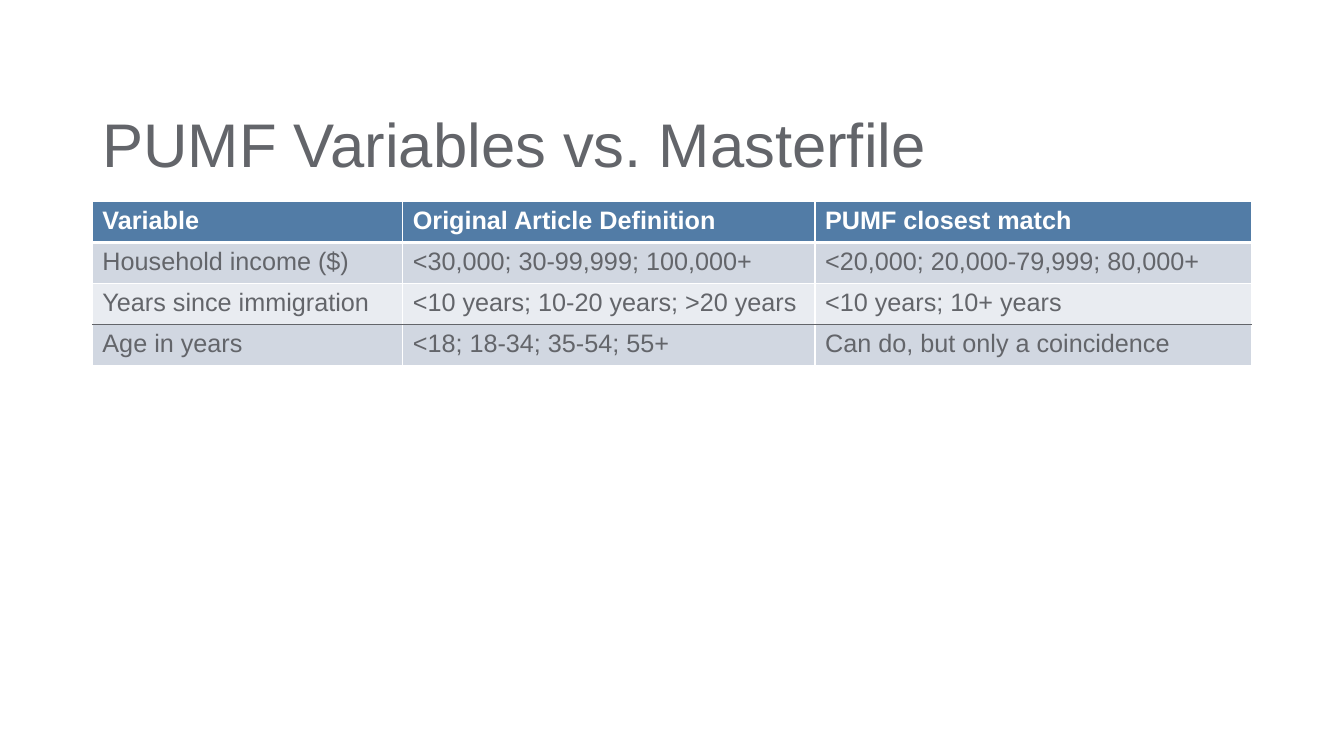
from lxml import etree
from pptx import Presentation
from pptx.dml.color import RGBColor
from pptx.enum.text import MSO_ANCHOR as Anchor, MSO_AUTO_SIZE as AutoSize, PP_ALIGN as Align
from pptx.oxml import parse_xml
from pptx.oxml.ns import nsdecls
from pptx.util import Pt

WHITE, GREY, BLUE = "FFFFFF", "63656A", "527CA6"
DARK_BAND, LIGHT_BAND = "D1D7E1", "E9ECF1"


def rgb(value):
    return RGBColor.from_string(value)


def write(frame, text, size=18, color=GREY, bold=False, spacing=1.0):
    paragraph = frame.paragraphs[0]
    paragraph.alignment = Align.LEFT
    paragraph.line_spacing = spacing
    run = paragraph.add_run()
    run.text = text
    run.font.name = "Arial"
    run.font.size = Pt(size)
    run.font.bold = bold
    run.font.color.rgb = rgb(color)


deck = Presentation()
deck.slide_width, deck.slide_height = Pt(960), Pt(540)
slide = deck.slides.add_slide(deck.slide_layouts[5])

# Title
title = slide.shapes.title
title.left, title.top, title.width, title.height = Pt(66), Pt(78.5), Pt(828), Pt(54.5)
title.text_frame.auto_size = AutoSize.NONE
title.text_frame.vertical_anchor = Anchor.MIDDLE
write(title.text_frame, "PUMF Variables vs. Masterfile", size=44, spacing=0.9)

# Variable comparison table
definitions = [
    ("Variable", "Original Article Definition", "PUMF closest match"),
    ("Household income ($)", "<30,000; 30-99,999; 100,000+", "<20,000; 20,000-79,999; 80,000+"),
    ("Years since immigration", "<10 years; 10-20 years; >20 years", "<10 years; 10+ years"),
    ("Age in years", "<18; 18-34; 35-54; 55+", "Can do, but only a coincidence"),
]
row_fills = [BLUE, DARK_BAND, LIGHT_BAND, DARK_BAND]
# Horizontal rules from the top edge to the bottom edge
rules = [(WHITE, 1), (WHITE, 3), (WHITE, 1), (GREY, 1), (WHITE, 1)]
column_widths = [221.75, 294.5, 311.75]
row_height = 29.2

comparison = slide.shapes.add_table(
    len(definitions), len(column_widths), Pt(66), Pt(144),
    Pt(sum(column_widths)), Pt(row_height * len(definitions))).table
for column, width in zip(comparison.columns, column_widths):
    column.width = Pt(width)

for r, definition in enumerate(definitions):
    comparison.rows[r].height = Pt(row_height)
    header = r == 0
    for c, text in enumerate(definition):
        cell = comparison.cell(r, c)
        cell.fill.solid()
        cell.fill.fore_color.rgb = rgb(row_fills[r])
        write(cell.text_frame, text, color=WHITE if header else GREY, bold=header)

        # Cell borders come before the fill in the cell properties
        borders = [("lnL", (WHITE, 1)), ("lnR", (WHITE, 1)),
                   ("lnT", rules[r]), ("lnB", rules[r + 1])]
        properties = cell._tc.get_or_add_tcPr()
        for place, (side, (color, weight)) in enumerate(borders):
            line = parse_xml(f'<a:{side} {nsdecls("a")} w="{Pt(weight)}"><a:solidFill/></a:{side}>')
            etree.SubElement(line[0], line[0].tag.replace("solidFill", "srgbClr"), val=color)
            properties.insert(place, line)

deck.save("out.pptx")
